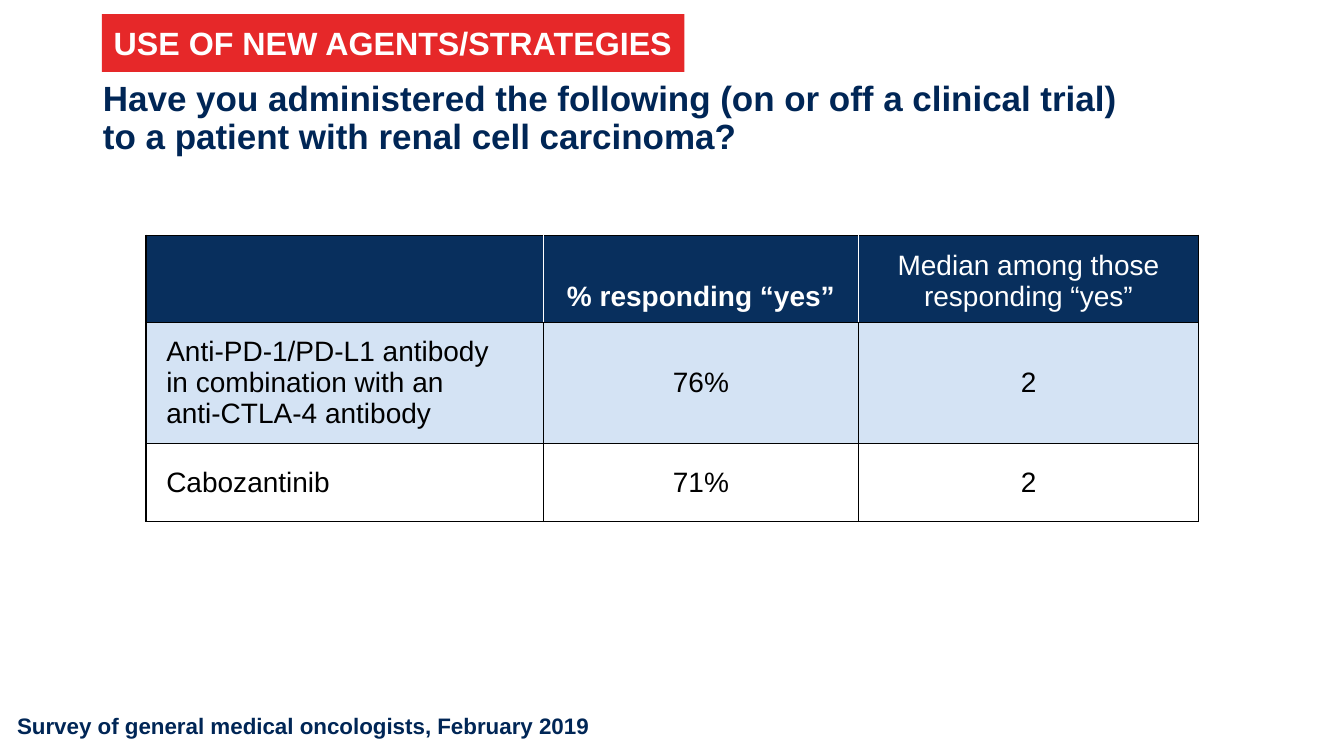
from lxml.etree import SubElement
from pptx import Presentation
from pptx.dml.color import RGBColor
from pptx.enum.shapes import MSO_SHAPE
from pptx.enum.text import MSO_ANCHOR, MSO_AUTO_SIZE, PP_ALIGN
from pptx.oxml.ns import qn
from pptx.util import Cm, Pt

# Content ("\v" is a line break, "\n" a new paragraph)
BANNER = "USE OF NEW AGENTS/STRATEGIES"
TITLE = ("Have you administered the following (on or off a clinical trial) \v"
         "to a patient with renal cell carcinoma?")
SOURCE = "Survey of general medical oncologists, February 2019"
ROWS = [
    ("", "% responding “yes”", "Median among those\nresponding “yes”"),
    ("Anti-PD-1/PD-L1 antibody \vin combination with an \vanti-CTLA-4 antibody", "76%", "2"),
    ("Cabozantinib", "71%", "2"),
]

# Style
FONT = "Arial"
COLORS = {"navy": "002656", "header": "082F5D", "band": "D4E3F4",
          "red": "E62829", "white": "FFFFFF", "black": "000000"}
ROW_FILLS = ["header", "band", "white"]
COLUMN_WIDTHS = [10.01, 7.95, 8.56]
ROW_HEIGHTS = [2.14, 2.87, 1.97]


def color(name):
    return RGBColor.from_string(COLORS[name])


def write(frame, text, size, ink, bold=False, align=PP_ALIGN.LEFT, spacing=None):
    frame.text = text
    for para in frame.paragraphs:
        para.alignment = align
        if spacing:
            para.line_spacing = spacing
        para.font.name = FONT
        para.font.size = Pt(size)
        para.font.bold = bold
        para.font.color.rgb = color(ink)


def add_borders(cell, inks):
    properties = cell._tc.get_or_add_tcPr()
    for side, ink in inks.items():
        line = SubElement(properties, qn(f"a:ln{side}"), w=str(Pt(1)))
        fill = SubElement(line, qn("a:solidFill"))
        SubElement(fill, qn("a:srgbClr"), val=COLORS[ink])


deck = Presentation()
deck.slide_width, deck.slide_height = Cm(33.87), Cm(19.05)
page = deck.slides.add_slide(deck.slide_layouts[5])

# Source line
box = page.shapes.add_textbox(Cm(0.18), Cm(17.83), Cm(17.17), Cm(0.94))
box.text_frame.word_wrap = True
write(box.text_frame, SOURCE, 16, "navy", bold=True)

# Title
title = page.shapes.title
title.left, title.top, title.width, title.height = Cm(2.34), Cm(1.8), Cm(29.21), Cm(2.41)
title.text_frame.auto_size = MSO_AUTO_SIZE.NONE
title.text_frame.vertical_anchor = MSO_ANCHOR.MIDDLE
write(title.text_frame, TITLE, 25, "navy", bold=True, spacing=0.9)

# Table
table = page.shapes.add_table(
    len(ROWS), len(COLUMN_WIDTHS), Cm(3.68), Cm(5.93),
    Cm(sum(COLUMN_WIDTHS)), Cm(sum(ROW_HEIGHTS))).table
for column, width in zip(table.columns, COLUMN_WIDTHS):
    column.width = Cm(width)
for row, height in zip(table.rows, ROW_HEIGHTS):
    row.height = Cm(height)

last = len(COLUMN_WIDTHS) - 1
for r, texts in enumerate(ROWS):
    header = r == 0
    for c, text in enumerate(texts):
        cell = table.cell(r, c)
        cell.margin_left = cell.margin_right = Cm(0.51)
        cell.margin_top = cell.margin_bottom = Cm(0.25)
        cell.vertical_anchor = MSO_ANCHOR.BOTTOM if header else MSO_ANCHOR.MIDDLE
        write(cell.text_frame, text, 20, "white" if header else "black",
              bold=header and c == 1,
              align=PP_ALIGN.CENTER if c else PP_ALIGN.LEFT)
        # Header dividers are white, every other border is black
        add_borders(cell, {
            "L": "white" if header and c > 0 else "black",
            "R": "white" if header and c < last else "black",
            "T": "black",
            "B": "black",
        })
        cell.fill.solid()
        cell.fill.fore_color.rgb = color(ROW_FILLS[r])

# Red banner
banner = page.shapes.add_shape(MSO_SHAPE.RECTANGLE, Cm(2.57), Cm(0.36), Cm(14.68), Cm(1.45))
banner.shadow.inherit = False
banner.fill.solid()
banner.fill.fore_color.rgb = color("red")
banner.line.fill.background()
banner.text_frame.word_wrap = True
banner.text_frame.vertical_anchor = MSO_ANCHOR.MIDDLE
write(banner.text_frame, BANNER, 23, "white", bold=True, align=PP_ALIGN.CENTER)

deck.save("out.pptx")
